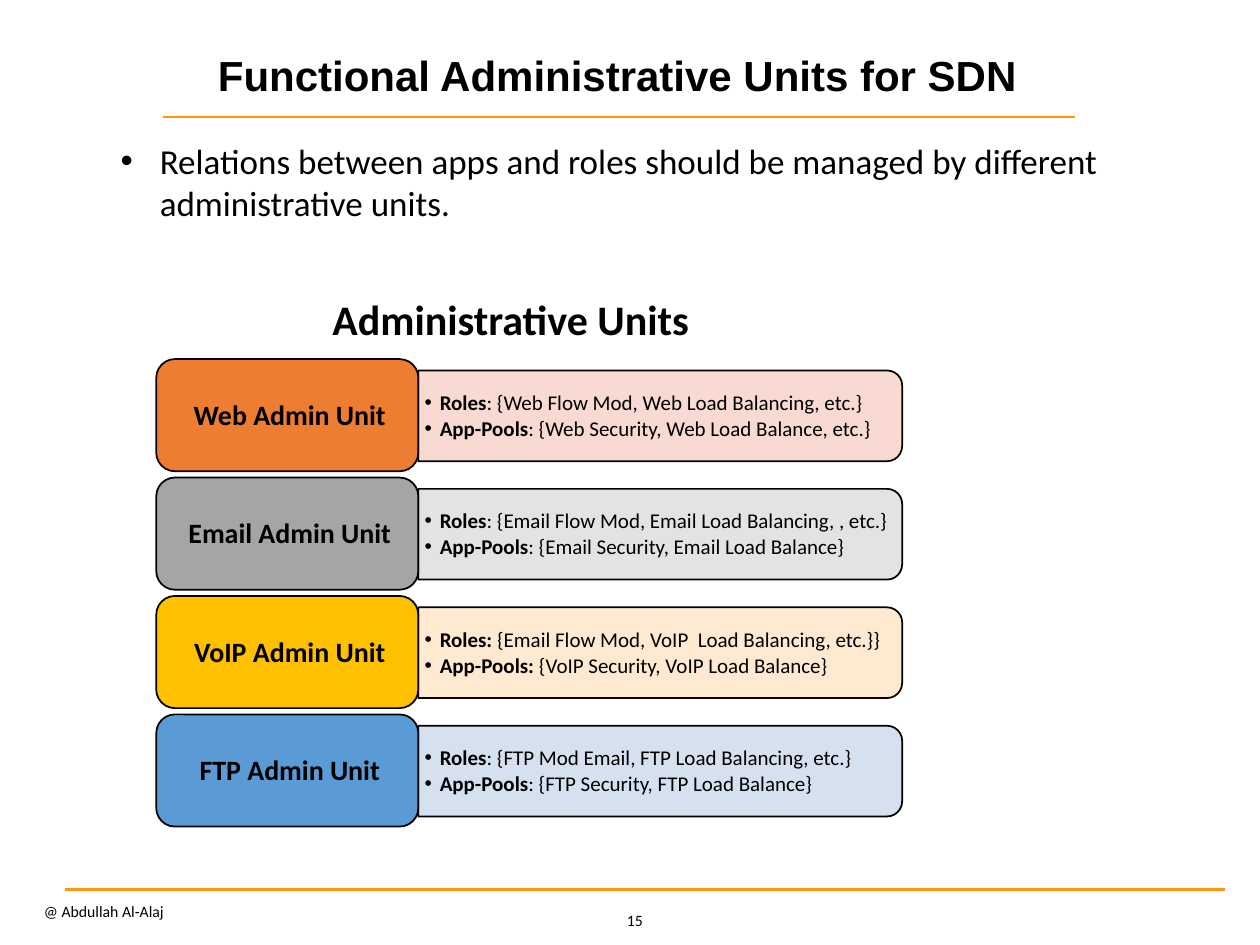
from dataclasses import dataclass

from lxml import etree
from pptx import Presentation
from pptx.dml.color import RGBColor
from pptx.enum.shapes import MSO_CONNECTOR, MSO_SHAPE
from pptx.enum.text import MSO_ANCHOR, PP_ALIGN
from pptx.oxml.ns import qn
from pptx.util import Inches, Pt

LEFT, CENTER, RIGHT = PP_ALIGN.LEFT, PP_ALIGN.CENTER, PP_ALIGN.RIGHT
TOP, MIDDLE, BOTTOM = MSO_ANCHOR.TOP, MSO_ANCHOR.MIDDLE, MSO_ANCHOR.BOTTOM
ROUND, TAB = MSO_SHAPE.ROUNDED_RECTANGLE, MSO_SHAPE.ROUND_2_SAME_RECTANGLE
STRAIGHT = MSO_CONNECTOR.STRAIGHT

BLACK = RGBColor(0x00, 0x00, 0x00)
AMBER = RGBColor(0xFF, 0x95, 0x0E)
ORANGE = RGBColor(0xED, 0x7D, 0x31)
PINK = RGBColor(0xF8, 0xD7, 0xCE)
GRAY = RGBColor(0xA5, 0xA5, 0xA5)
SILVER = RGBColor(0xE1, 0xE1, 0xE1)
GOLD = RGBColor(0xFF, 0xC0, 0x00)
CREAM = RGBColor(0xFF, 0xE8, 0xCC)
BLUE = RGBColor(0x5B, 0x9B, 0xD5)
PALE = RGBColor(0xD2, 0xDE, 0xEF)

FIRST, STEP = 2.85, 0.94
PLAIN = (0.1, 0.05, 0.1, 0.05)
TIGHT = (0.05, 0, 0, 0)


@dataclass
class Unit:
    name: str
    fill: RGBColor
    tint: RGBColor
    roles: tuple[str, str]
    pools: tuple[str, str]


UNITS = [
    Unit("Web Admin Unit", ORANGE, PINK,
         ("Roles", ": {Web Flow Mod, Web Load Balancing, etc.}"),
         ("App-Pools", ": {Web Security, Web Load Balance, etc.}")),
    Unit("Email Admin Unit", GRAY, SILVER,
         ("Roles", ": {Email Flow Mod, Email Load Balancing, , etc.}"),
         ("App-Pools", ": {Email Security, Email Load Balance}")),
    Unit("VoIP Admin Unit", GOLD, CREAM,
         ("Roles: ", "{Email Flow Mod, VoIP  Load Balancing, etc.}}"),
         ("App-Pools: ", "{VoIP Security, VoIP Load Balance}")),
    Unit("FTP Admin Unit", BLUE, PALE,
         ("Roles", ": {FTP Mod Email, FTP Load Balancing, etc.}"),
         ("App-Pools", ": {FTP Security, FTP Load Balance}")),
]


def write(slide, box: tuple, *paras: tuple[str, ...], size: float,
          font: str = "Calibri", bold: bool = False, align=LEFT, anchor=TOP,
          pad: tuple = PLAIN, lines: float = 1.0, after: float = 0,
          hang: float = 0) -> None:
    frame = slide.shapes.add_textbox(*map(Inches, box)).text_frame
    frame.word_wrap = True
    frame.vertical_anchor = anchor
    (frame.margin_left, frame.margin_top,
     frame.margin_right, frame.margin_bottom) = map(Inches, pad)
    for i, runs in enumerate(paras):
        para = frame.add_paragraph() if i else frame.paragraphs[0]
        para.alignment = align
        para.line_spacing = lines
        para.space_after = Pt(after)
        if hang:
            props = para._p.get_or_add_pPr()
            props.set("marL", str(Inches(hang)))
            props.set("indent", str(-Inches(hang)))
            etree.SubElement(props, qn("a:buFont")).set("typeface", "Arial")
            etree.SubElement(props, qn("a:buChar")).set("char", "•")
        for j, text in enumerate(runs):
            run = para.add_run()
            run.text = text
            run.font.name = font
            run.font.size = Pt(size)
            run.font.bold = bold and j == 0
            run.font.color.rgb = BLACK


def rule(slide, left: float, right: float, y: float) -> None:
    line = slide.shapes.add_connector(
        STRAIGHT, Inches(left), Inches(y), Inches(right), Inches(y))
    line.line.color.rgb = AMBER
    line.line.width = Pt(1.5)
    etree.SubElement(line._element.spPr, qn("a:effectLst"))


def block(slide, kind, box: tuple, fill: RGBColor, turn: float = 0,
          alpha: int = 100) -> None:
    shape = slide.shapes.add_shape(kind, *map(Inches, box))
    shape.shadow.inherit = False
    shape.rotation = turn
    shape.fill.solid()
    shape.fill.fore_color.rgb = fill
    shape.line.color.rgb = BLACK
    shape.line.width = Pt(1)
    if alpha < 100:
        tone = shape._element.spPr.find(qn("a:solidFill"))[0]
        etree.SubElement(tone, qn("a:alpha")).set("val", str(alpha * 1000))


def draw(slide, unit: Unit, top: float) -> None:
    block(slide, TAB, (4.88, top - 1.47, 0.72, 3.84), unit.tint,
          turn=90, alpha=90)
    write(slide, (3.32, top + 0.13, 3.81, 0.65), unit.roles, unit.pools,
          size=12, bold=True, anchor=MIDDLE, pad=TIGHT, lines=0.9,
          after=1.8, hang=0.12)
    block(slide, ROUND, (1.24, top, 2.08, 0.89), unit.fill)
    write(slide, (1.28, top + 0.05, 1.99, 0.81), (unit.name,), size=16,
          bold=True, align=CENTER, anchor=MIDDLE, pad=TIGHT, lines=0.9,
          after=5.6)


def main() -> None:
    deck = Presentation()
    deck.slide_width, deck.slide_height = Inches(10), Inches(7.5)
    slide = deck.slides.add_slide(deck.slide_layouts[6])

    rule(slide, 1.29, 8.53, 0.93)
    rule(slide, 0.52, 9.72, 7.06)
    write(slide, (1.32, 0.34, 7.16, 0.51),
          ("Functional Administrative Units for SDN",), size=24,
          font="Arial", bold=True, align=CENTER, anchor=BOTTOM, lines=0.9)
    write(slide, (4.8, 7.1, 0.4, 0.4), ("15",), size=9, align=RIGHT,
          anchor=MIDDLE)
    write(slide, (0.25, 7.05, 2.75, 0.36), ("@ Abdullah Al-Alaj",), size=9,
          anchor=MIDDLE)
    write(slide, (0.86, 1.06, 8.55, 0.77),
          ("Relations between apps and roles should be managed by "
           "different administrative units.",), size=20, hang=0.31)
    for i, unit in enumerate(UNITS):
        draw(slide, unit, FIRST + i * STEP)
    write(slide, (2.54, 2.28, 3.04, 0.5), ("Administrative Units",),
          size=24, bold=True)

    deck.save("out.pptx")


if __name__ == "__main__":
    main()
